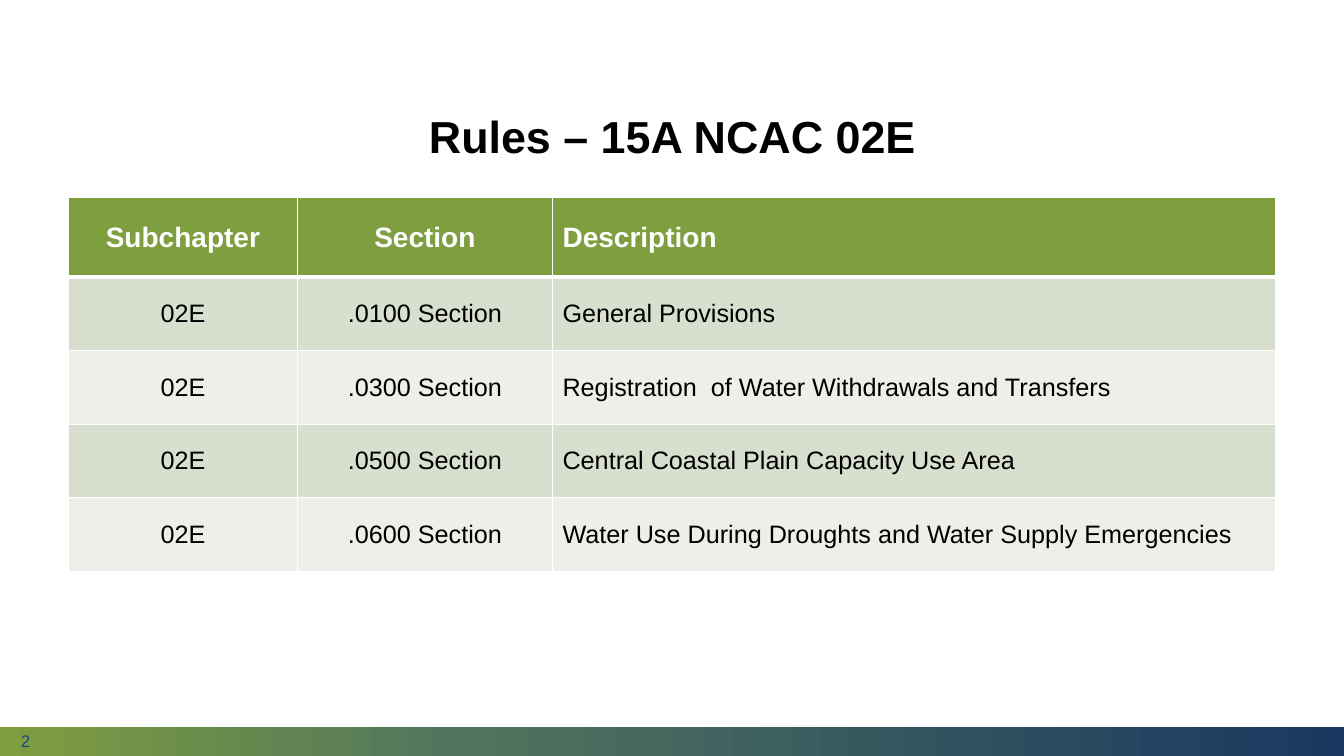
from pptx import Presentation
from pptx.dml.color import RGBColor
from pptx.enum.shapes import MSO_SHAPE as Shape
from pptx.enum.text import MSO_ANCHOR as Anchor, PP_ALIGN as Align
from pptx.oxml import parse_xml
from pptx.oxml.ns import nsdecls, qn
from pptx.util import Inches, Pt

GREEN, TEAL, NAVY = "7F9E3F", "4F745E", "183860"
WHITE, BLACK, BLUE = "FFFFFF", "000000", "1F497D"
BANDS = ["D8DFCF", "ECF0E8"]

HEADER = ["Subchapter", "Section", "Description"]
RULES = [
    ("02E", ".0100 Section", "General Provisions"),
    ("02E", ".0300 Section", "Registration  of Water Withdrawals and Transfers"),
    ("02E", ".0500 Section", "Central Coastal Plain Capacity Use Area"),
    ("02E", ".0600 Section", "Water Use During Droughts and Water Supply Emergencies"),
]
COLUMN_WIDTHS = [2.27, 2.53, 7.17]
ALIGNMENTS = [Align.CENTER, Align.CENTER, Align.LEFT]
HEADER_HEIGHT, ROW_HEIGHT = 0.79, 0.73


def color(value):
    return RGBColor.from_string(value)


def write(para, text, size, shade, bold=False, align=Align.LEFT):
    para.text = text
    para.alignment = align
    font = para.font
    font.name, font.size, font.bold = "Arial", Pt(size), bold
    font.color.rgb = color(shade)


def add_text(page, box, text, size, shade, **style):
    frame = page.shapes.add_textbox(*map(Inches, box)).text_frame
    frame.word_wrap = True
    frame.vertical_anchor = Anchor.MIDDLE
    para = frame.paragraphs[0]
    write(para, text, size, shade, **style)
    return para


def add_title(page, box):
    para = add_text(page, box, "Rules – 15A NCAC 02E", 32, BLACK,
                    bold=True, align=Align.CENTER)
    para.line_spacing = 0.9


def add_footer(page, box):
    left, top, width, height = box
    band = page.shapes.add_shape(Shape.RECTANGLE, *map(Inches, box))
    band.shadow.inherit = False
    band.line.fill.background()
    band.fill.gradient()
    band.fill.gradient_angle = 0
    stops = band._element.spPr.find(qn("a:gradFill")).find(qn("a:gsLst"))
    for stop in list(stops):
        stops.remove(stop)
    for percent, shade in [(0, GREEN), (35, TEAL), (100, NAVY)]:
        stops.append(parse_xml(
            f'<a:gs {nsdecls("a")} pos="{percent * 1000}">'
            f'<a:srgbClr val="{shade}"/></a:gs>'))
    add_text(page, (left + 0.11, top + 0.06, 3, 0.15), "2", 12, BLUE)


def set_borders(cell, top, bottom):
    properties = cell._tc.get_or_add_tcPr()
    for side, points in [("L", 1), ("R", 1), ("T", top), ("B", bottom)]:
        properties.append(parse_xml(
            f'<a:ln{side} {nsdecls("a")} w="{Pt(points)}"><a:solidFill>'
            f'<a:srgbClr val="{WHITE}"/></a:solidFill></a:ln{side}>'))


def add_rules_table(page, box):
    rows = [HEADER, *RULES]
    table = page.shapes.add_table(len(rows), len(HEADER), *map(Inches, box)).table
    for column, width in zip(table.columns, COLUMN_WIDTHS):
        column.width = Inches(width)
    for r, texts in enumerate(rows):
        header = r == 0
        table.rows[r].height = Inches(HEADER_HEIGHT if header else ROW_HEIGHT)
        for c, text in enumerate(texts):
            cell = table.cell(r, c)
            cell.vertical_anchor = Anchor.MIDDLE
            set_borders(cell, top=3 if r == 1 else 1, bottom=3 if header else 1)
            cell.fill.solid()
            cell.fill.fore_color.rgb = color(GREEN if header else BANDS[(r - 1) % 2])
            write(cell.text_frame.paragraphs[0], text, 20 if header else 18,
                  WHITE if header else BLACK, bold=header, align=ALIGNMENTS[c])


def main():
    deck = Presentation()
    deck.slide_width, deck.slide_height = Inches(13.33), Inches(7.5)
    page = deck.slides.add_slide(deck.slide_layouts[6])
    add_footer(page, (0, 7.21, 13.33, 0.3))
    add_title(page, (0.92, 0.8, 11.5, 1.16))
    add_rules_table(page, (0.68, 1.96, 11.97, 3.71))
    deck.save("out.pptx")


if __name__ == "__main__":
    main()
